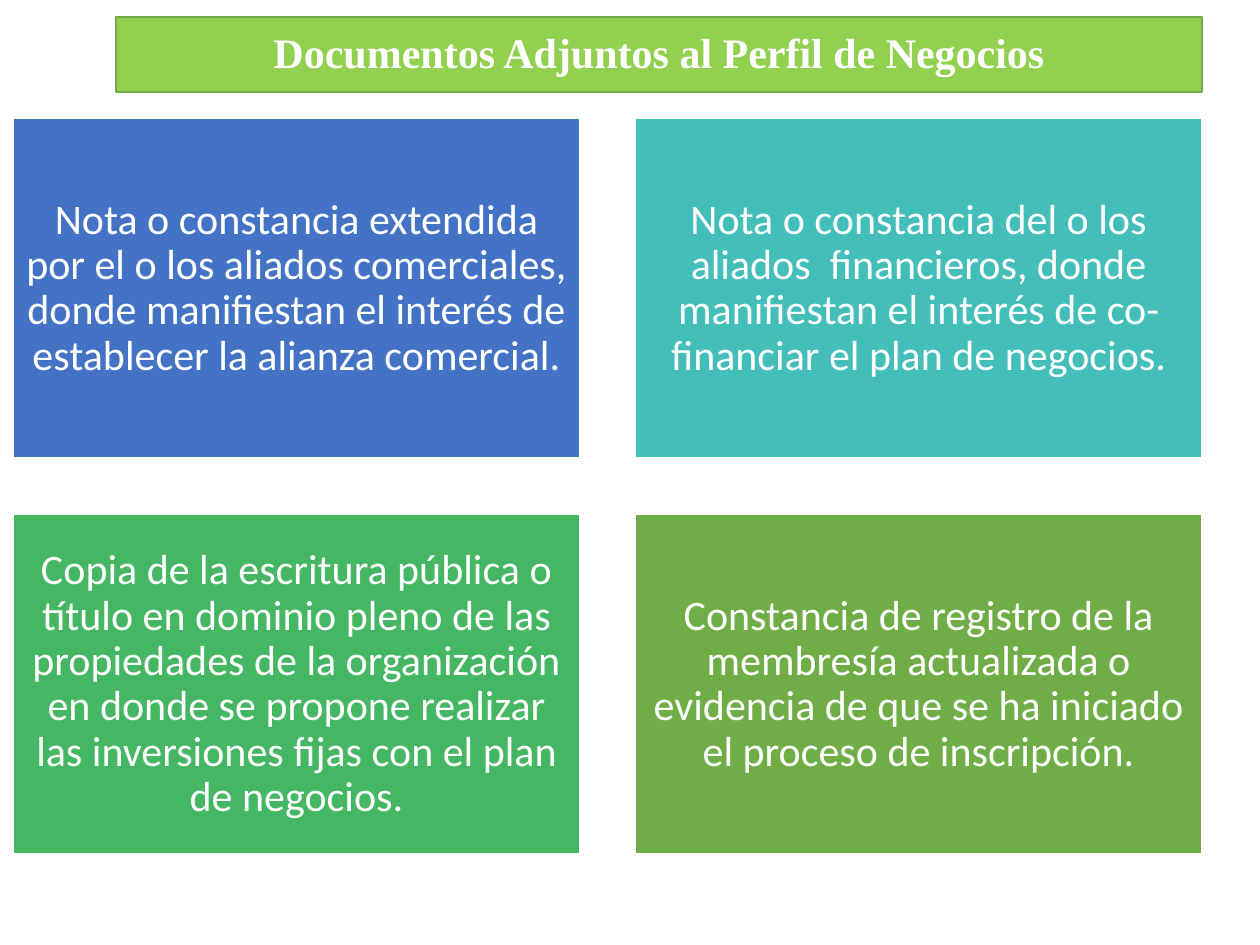
from dataclasses import dataclass

from pptx import Presentation
from pptx.dml.color import RGBColor
from pptx.enum.shapes import MSO_SHAPE
from pptx.enum.text import MSO_ANCHOR, MSO_AUTO_SIZE, PP_ALIGN
from pptx.util import Pt


@dataclass(frozen=True)
class Theme:
    """Colours, fonts and sizes of the slide."""
    white: str = "FFFFFF"
    band: str = "92D050"
    edge: str = "70AD47"
    cards: tuple = ("4472C4", "43BEB9", "45B664", "70AD47")
    head: str = "Times New Roman"
    body: str = "Calibri"
    size: int = 24
    rule: int = 1


@dataclass(frozen=True)
class Box:
    """A region in points."""
    left: float
    top: float
    width: float
    height: float


THEME = Theme()
TITLE = "Documentos Adjuntos al Perfil de Negocios"
NOTES = (
    "Nota o constancia extendida por el o los aliados comerciales, donde "
    "manifiestan el interés de establecer la alianza comercial.",
    "Nota o constancia del o los aliados  financieros, donde manifiestan "
    "el interés de co-financiar el plan de negocios.",
    "Copia de la escritura pública o título en dominio pleno de las "
    "propiedades de la organización en donde se propone realizar las "
    "inversiones fijas con el plan de negocios.",
    "Constancia de registro de la membresía actualizada o evidencia de "
    "que se ha iniciado el proceso de inscripción.",
)


def paint(shape, fill, line):
    """Give a shape its fill and outline."""
    shape.fill.solid()
    shape.fill.fore_color.rgb = RGBColor.from_string(fill)
    shape.line.color.rgb = RGBColor.from_string(line)
    shape.line.width = Pt(THEME.rule)


def write(shape, text, face, bold=False):
    """Write one centred white paragraph in a shape."""
    frame = shape.text_frame
    frame.text = text
    frame.word_wrap = True
    frame.auto_size = MSO_AUTO_SIZE.NONE
    frame.vertical_anchor = MSO_ANCHOR.MIDDLE
    para = frame.paragraphs[0]
    para.alignment = PP_ALIGN.CENTER
    para.line_spacing = 0.9
    font = para.font
    font.name, font.size, font.bold = face, Pt(THEME.size), bold
    font.color.rgb = RGBColor.from_string(THEME.white)


def add_title(slide, box):
    """Set the title band in its box."""
    title = slide.shapes.title
    title.left, title.top = Pt(box.left), Pt(box.top)
    title.width, title.height = Pt(box.width), Pt(box.height)
    paint(title, THEME.band, THEME.edge)
    write(title, TITLE, THEME.head, True)


def add_cards(slide, box, gap=32, cols=2, pad=7.2):
    """Lay the document cards out as a grid in the box."""
    rows = len(NOTES) // cols
    wide = (box.width - gap * (cols - 1)) / cols
    high = (box.height - gap * (rows - 1)) / rows
    for i, (text, fill) in enumerate(zip(NOTES, THEME.cards)):
        row, col = divmod(i, cols)
        card = slide.shapes.add_shape(
            MSO_SHAPE.RECTANGLE,
            Pt(box.left + col * (wide + gap)),
            Pt(box.top + row * (high + gap)),
            Pt(wide), Pt(high))
        card.shadow.inherit = False
        paint(card, fill, THEME.white)
        write(card, text, THEME.body)
        frame = card.text_frame
        frame.margin_left = frame.margin_right = Pt(pad)
        frame.margin_top = frame.margin_bottom = Pt(pad)


def main():
    """Build and save the slide."""
    deck = Presentation()
    deck.slide_width, deck.slide_height = Pt(720), Pt(540)
    slide = deck.slides.add_slide(deck.slide_layouts[5])
    add_cards(slide, Box(7.7, 67.7, 679, 420.5))
    add_title(slide, Box(66.3, 9.8, 620.6, 42.6))
    deck.save("out.pptx")


if __name__ == "__main__":
    main()
